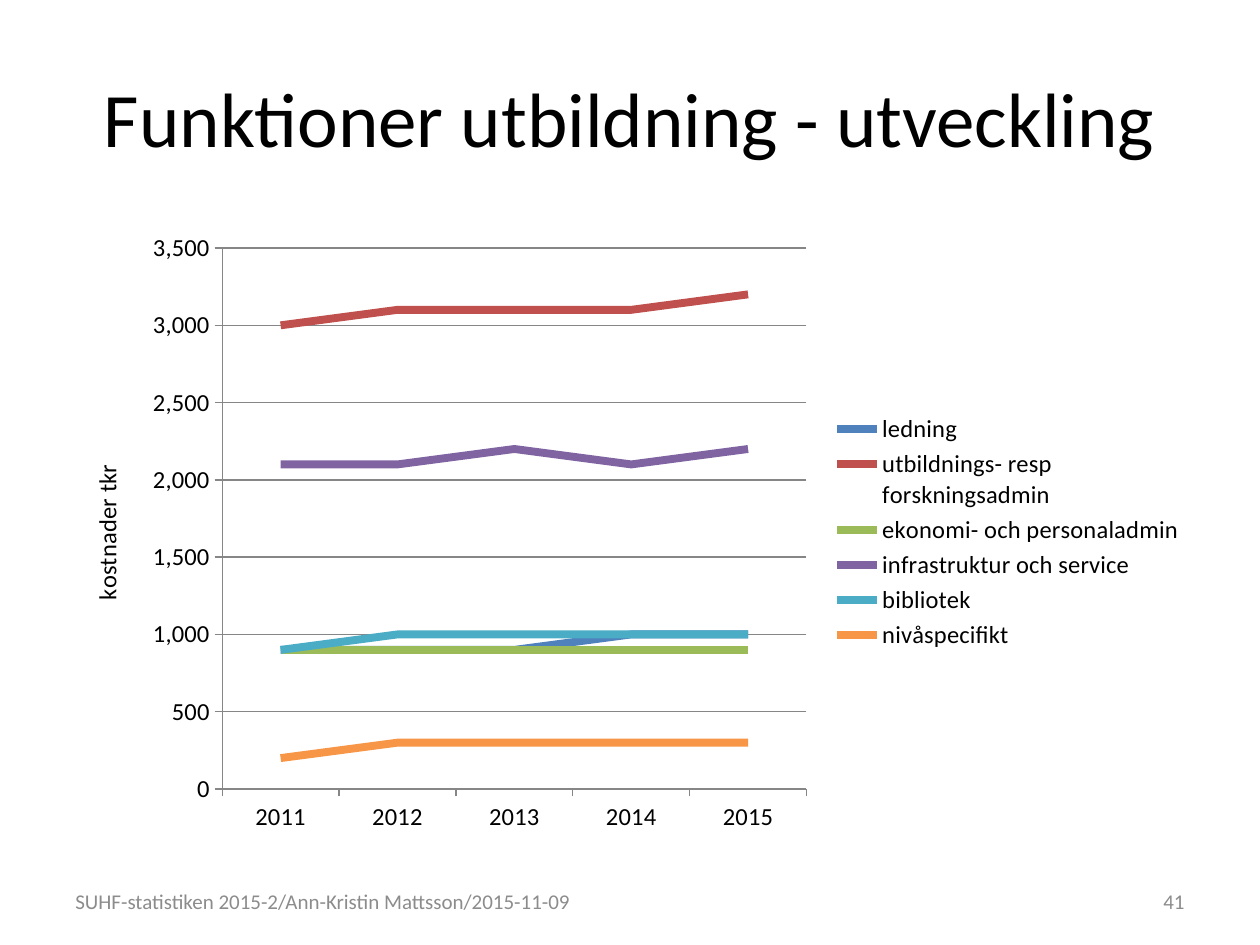
from pptx import Presentation
from pptx.chart.data import CategoryChartData as ChartData
from pptx.dml.color import RGBColor as RGB
from pptx.enum.chart import XL_CHART_TYPE as Kind, XL_LEGEND_POSITION as Side
from pptx.enum.chart import XL_TICK_MARK as Tick
from pptx.enum.text import MSO_ANCHOR as Anchor, PP_ALIGN as Align
from pptx.util import Inches, Pt

FONT = "Calibri"
COLORS = {
    "text": "000000", "muted": "8C8C8C", "line": "868686",
    "blue": "4F81BD", "red": "C0504D", "green": "9BBB59",
    "purple": "8064A2", "teal": "4BACC6", "orange": "F79646",
}
YEARS = ["2011", "2012", "2013", "2014", "2015"]
# Costs in thousands of kronor
COSTS = [
    ("ledning", "blue", [900, 900, 900, 1000, 1000]),
    ("utbildnings- resp forskningsadmin", "red", [3000, 3100, 3100, 3100, 3200]),
    ("ekonomi- och personaladmin", "green", [900, 900, 900, 900, 900]),
    ("infrastruktur och service", "purple", [2100, 2100, 2200, 2100, 2200]),
    ("bibliotek", "teal", [900, 1000, 1000, 1000, 1000]),
    ("nivåspecifikt", "orange", [200, 300, 300, 300, 300]),
]


def color(name):
    return RGB.from_string(COLORS[name])


def style(font, size, tint="text"):
    font.name, font.size, font.bold = FONT, Pt(size), False
    font.color.rgb = color(tint)


def write(frame, text, size, tint="text", align=Align.LEFT):
    frame.word_wrap = True
    frame.vertical_anchor = Anchor.MIDDLE
    para = frame.paragraphs[0]
    para.alignment = align
    run = para.add_run()
    run.text = text
    style(run.font, size, tint)


def stroke(line, tint, width):
    line.color.rgb = color(tint)
    line.width = Pt(width)


def add_title(slide, box):
    title = slide.shapes.title
    title.left, title.top, title.width, title.height = map(Inches, box)
    write(title.text_frame, "Funktioner utbildning - utveckling", 44,
          align=Align.CENTER)


def add_costs(slide, box):
    data = ChartData(number_format="#,##0,")
    data.categories = YEARS
    for name, _, costs in COSTS:
        data.add_series(name, [cost * 1000 for cost in costs])
    chart = slide.shapes.add_chart(Kind.LINE, *map(Inches, box), data).chart
    style(chart.font, 14)
    chart.has_title = False

    # Legend
    chart.has_legend = True
    chart.legend.position = Side.RIGHT
    chart.legend.include_in_layout = False
    style(chart.legend.font, 14)

    # Axes
    years, costs = chart.category_axis, chart.value_axis
    for axis in (years, costs):
        axis.major_tick_mark = Tick.OUTSIDE
        axis.minor_tick_mark = Tick.NONE
        style(axis.tick_labels.font, 14)
        stroke(axis.format.line, "line", 0.75)
    costs.minimum_scale, costs.maximum_scale = 0, 3500000
    costs.major_unit = 500000
    costs.has_major_gridlines = True
    stroke(costs.major_gridlines.format.line, "line", 0.75)
    costs.tick_labels.number_format = "#,##0,"
    costs.tick_labels.number_format_is_linked = False
    label = costs.axis_title.text_frame.paragraphs[0].add_run()
    label.text = "kostnader tkr"
    style(label.font, 14)

    # Lines
    plot = chart.plots[0]
    plot.vary_by_categories = False
    for series, (_, tint, _) in zip(plot.series, COSTS):
        series.smooth = False
        stroke(series.format.line, tint, 4.5)


def add_foot(slide, box, text, align):
    frame = slide.shapes.add_textbox(*map(Inches, box)).text_frame
    write(frame, text, 12, "muted", align)


def main():
    deck = Presentation()
    deck.slide_width, deck.slide_height = Inches(10), Inches(7.5)
    slide = deck.slides.add_slide(deck.slide_layouts[5])
    add_title(slide, (0.5, 0.3, 9, 1.25))
    add_foot(slide, (0.5, 6.95, 4.26, 0.4),
             "SUHF-statistiken 2015-2/Ann-Kristin Mattsson/2015-11-09", Align.LEFT)
    add_foot(slide, (7.17, 6.95, 2.33, 0.4), "41", Align.RIGHT)
    add_costs(slide, (0.5, 1.75, 9, 4.95))
    deck.save("out.pptx")


if __name__ == "__main__":
    main()
